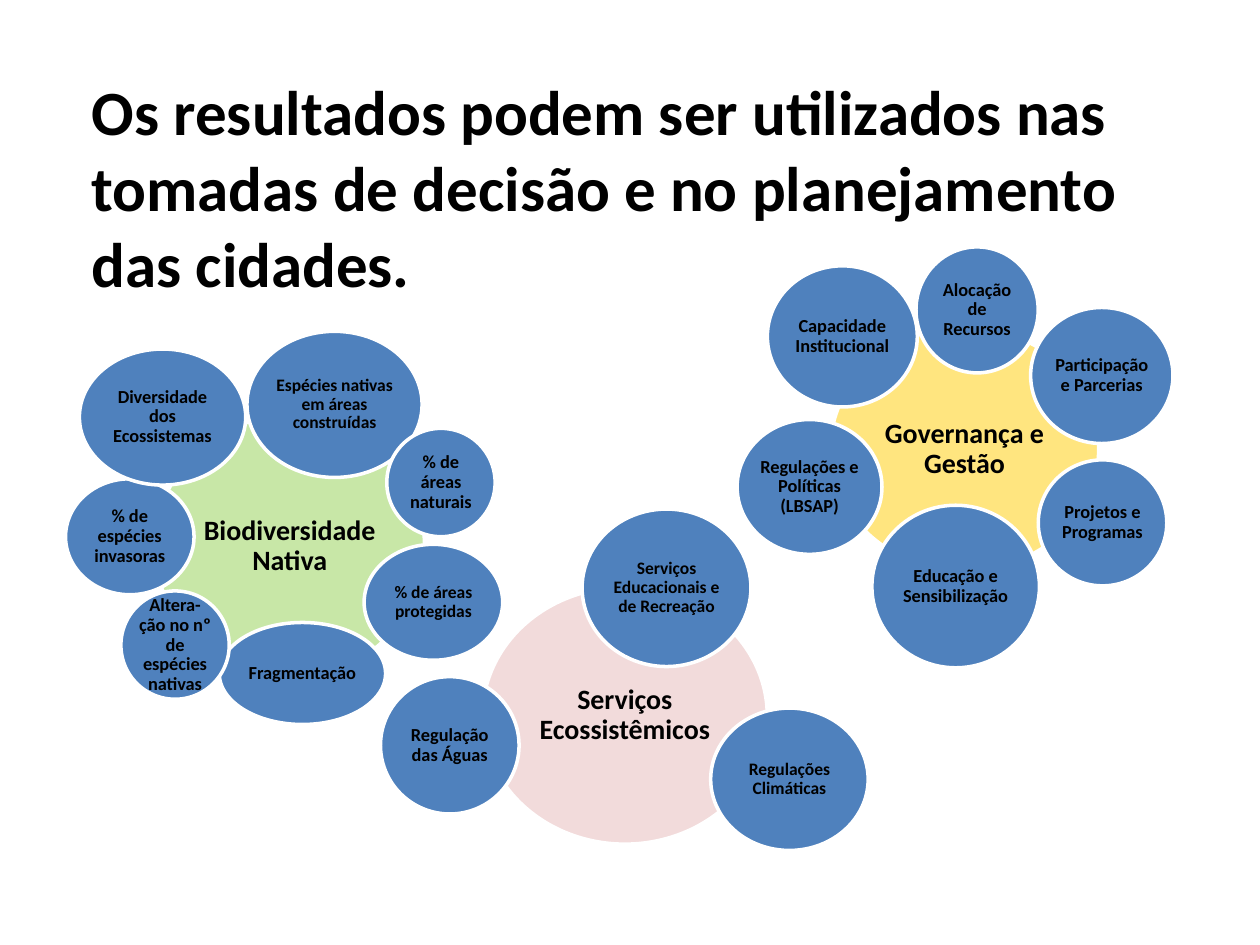
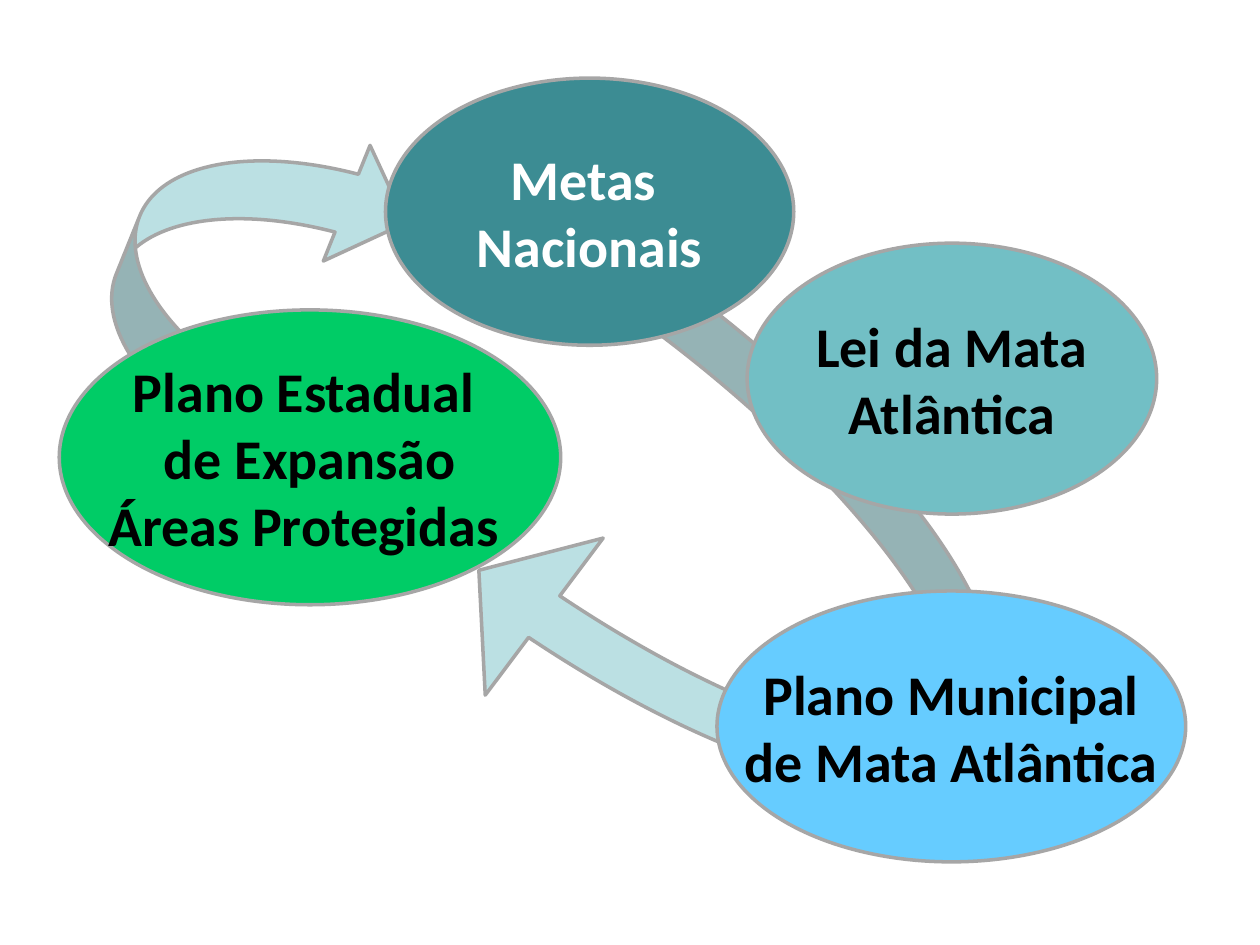
from lxml.etree import SubElement
from pptx import Presentation
from pptx.dml.color import RGBColor
from pptx.enum.shapes import MSO_SHAPE as Preset
from pptx.enum.text import MSO_ANCHOR as Anchor, PP_ALIGN as Align
from pptx.oxml.ns import qn
from pptx.util import Inches, Pt

BLACK = RGBColor(0x00, 0x00, 0x00)
WHITE = RGBColor(0xFF, 0xFF, 0xFF)
GREY = RGBColor(0xA6, 0xA6, 0xA6)
BLUE = RGBColor(0x4F, 0x81, 0xBD)
GREEN = RGBColor(0x92, 0xD0, 0x50)
PINK = RGBColor(0xE6, 0xB9, 0xB8)
YELLOW = RGBColor(0xFF, 0xCC, 0x00)
PALE_TEAL = RGBColor(0xBB, 0xE0, 0xE3)
TEAL = RGBColor(0x72, 0xBF, 0xC5)
DARK_TEAL = RGBColor(0x3C, 0x8C, 0x93)
SKY = RGBColor(0x66, 0xCC, 0xFF)
EMERALD = RGBColor(0x00, 0xCC, 0x66)

FONT = {"name": "Calibri", "bold": True}
LINE_WIDTH = Pt(2)
CENTRED = {"alignment": Align.CENTER}
BUBBLE_PARAGRAPH = CENTRED | {"line_spacing": 0.9}
BUBBLE_FRAME = {"word_wrap": True} | dict.fromkeys(
    ("margin_left", "margin_top", "margin_right", "margin_bottom"), Inches(0.01))

TITLE = "Os resultados podem ser utilizados nas tomadas de decisão e no planejamento das cidades."

CLUSTERS = [
    ((0.52, 2.63), GREEN, "Biodiversidade Nativa", (0.71, 0.67, 2.14, 2.08), [
        ("Espécies nativas em áreas construídas", 10, (1.44, 0, 1.39, 1.16)),
        ("% de áreas naturais", 10.5, (2.55, 0.77, 0.86, 0.86)),
        ("% de áreas protegidas", 10, (2.37, 1.69, 1.1, 0.92)),
        ("Fragmentação", 10.5, (1.22, 2.31, 1.32, 0.81)),
        ("% de espécies invasoras", 10.5, (0, 1.17, 1.02, 0.92)),
        ("Diversidade dos Ecossistemas", 10.5, (0.11, 0.14, 1.32, 1.08)),
        ("Altera-ção no nº de espécies nativas", 10.5, (0.44, 2.06, 0.86, 0.86)),
    ]),
    ((3.02, 4.04), PINK, "Serviços Ecossistêmicos", (0.81, 0.62, 2.26, 2.04), [
        ("Serviços Educacionais e de Recreação", 10, (1.6, 0, 1.34, 1.25)),
        ("Regulações Climáticas", 10, (2.62, 1.58, 1.25, 1.13)),
        ("Regulação das Águas", 10.5, (0, 1.33, 1.1, 1.09)),
    ]),
    ((5.85, 1.96), YELLOW, "Governança e Gestão", (0.74, 0.64, 2.13, 1.93), [
        ("Alocação de Recursos", 10.5, (1.42, 0, 0.97, 1)),
        ("Participação e Parcerias", 10.5, (2.33, 0.48, 1.13, 1.08)),
        ("Projetos e Programas", 10.5, (2.39, 1.69, 1.02, 1)),
        ("Educação e Sensibilização", 10.5, (1.07, 2.05, 1.33, 1.29)),
        ("Regulações e Políticas (LBSAP)", 10.5, (0, 1.37, 1.15, 1.07)),
        ("Capacidade Institucional", 10.5, (0.24, 0.15, 1.19, 1.12)),
    ]),
]

CYCLE_ARROWS = [
    ((4.01, 3.12, 3.88, 3.55), 36.9, (0.116, 0.439, 0.179)),
    ((0.99, 0.84, 1.98, 2.72), 202, ()),
]
CYCLE_STAGES = [
    ("Lei da Mata\vAtlântica", TEAL, BLACK, (5.93, 1.93, 3.25, 2.15)),
    ("Metas \vNacionais", DARK_TEAL, WHITE, (3.06, 0.62, 3.24, 2.12)),
    ("Plano Municipal\vde Mata Atlântica", SKY, BLACK, (5.69, 4.69, 3.72, 2.15)),
    ("Plano Estadual \vde Expansão\vÁreas Protegidas ", EMERALD, BLACK, (0.47, 2.46, 3.98, 2.34)),
]


def apply(target, formats):
    """Set each attribute in formats on target."""
    for name, value in formats.items():
        setattr(target, name, value)


def write(shape, text, size, color, frame_formats, paragraph_formats):
    """Put one formatted paragraph into a shape."""
    apply(shape.text_frame, frame_formats)
    paragraph = shape.text_frame.paragraphs[0]
    paragraph.text = text
    apply(paragraph, paragraph_formats)
    for run in paragraph.runs:
        apply(run.font, FONT | {"size": Pt(size)})
        run.font.color.rgb = color


def add_filled(shapes, preset, box, fill, line):
    """Add a flat preset shape with a solid fill and outline."""
    shape = shapes.add_shape(preset, *map(Inches, box))
    shape.shadow.inherit = False
    shape.fill.solid()
    shape.fill.fore_color.rgb = fill
    shape.line.color.rgb = line
    shape.line.width = LINE_WIDTH
    return shape


def make_translucent(shape, percent):
    """Give the fill of a shape the stated opacity."""
    color = shape._element.spPr.find(qn("a:solidFill")).find(qn("a:srgbClr"))
    SubElement(color, qn("a:alpha"), val=str(percent * 1000))


def add_bubble(shapes, origin, box, text, size, fill):
    """Add a captioned circle at an offset from the cluster origin."""
    left, top, width, height = box
    place = (origin[0] + left, origin[1] + top, width, height)
    bubble = add_filled(shapes, Preset.OVAL, place, fill, WHITE)
    write(bubble, text, size, BLACK,
          BUBBLE_FRAME | {"vertical_anchor": Anchor.MIDDLE}, BUBBLE_PARAGRAPH)
    return bubble


def add_cluster(slide, origin, color, theme, core_box, indicators):
    """Add a group with a theme circle and its indicators around it."""
    shapes = slide.shapes.add_group_shape().shapes
    make_translucent(add_bubble(shapes, origin, core_box, theme, 16, color), 50)
    for text, size, box in indicators:
        add_bubble(shapes, origin, box, text, size, BLUE)


def add_title(slide, box):
    """Add the heading in the given box."""
    title = slide.shapes.add_textbox(*map(Inches, box))
    write(title, TITLE, 36, BLACK, {"word_wrap": True}, {"space_after": Pt(6)})


def add_cycle_arrow(slide, box, rotation, adjustments):
    """Add a rotated curved arrow behind the stages."""
    arrow = add_filled(slide.shapes, Preset.CURVED_LEFT_ARROW, box, PALE_TEAL, GREY)
    arrow.rotation = rotation
    for index, value in enumerate(adjustments):
        arrow.adjustments[index] = value


def add_cycle_stage(slide, text, fill, color, box):
    """Add one captioned stage of the planning cycle."""
    stage = add_filled(slide.shapes, Preset.OVAL, box, fill, GREY)
    write(stage, text, 32, color,
          {"word_wrap": False, "vertical_anchor": Anchor.MIDDLE}, CENTRED)


def build_results_slide(slide):
    """Build the slide of indicator clusters."""
    add_title(slide, (0.63, 0.53, 9.04, 1.92))
    for cluster in CLUSTERS:
        add_cluster(slide, *cluster)


def build_cycle_slide(slide):
    """Build the slide of the planning cycle."""
    for arrow in CYCLE_ARROWS:
        add_cycle_arrow(slide, *arrow)
    for stage in CYCLE_STAGES:
        add_cycle_stage(slide, *stage)


def main():
    """Build and save the presentation."""
    presentation = Presentation()
    apply(presentation, {"slide_width": Inches(10), "slide_height": Inches(7.5)})
    blank = presentation.slide_layouts[6]
    for build in (build_results_slide, build_cycle_slide):
        build(presentation.slides.add_slide(blank))
    presentation.save("out.pptx")


if __name__ == "__main__":
    main()
